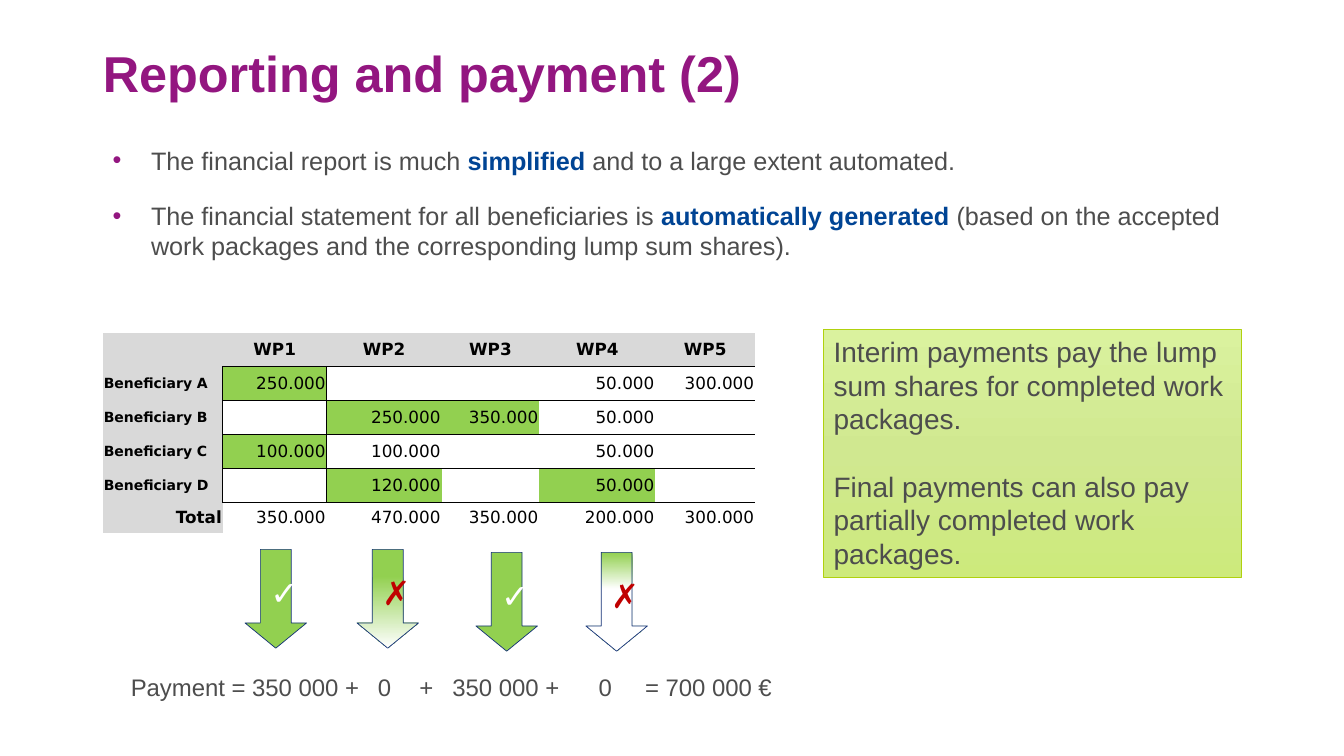
from dataclasses import dataclass

from lxml import etree
from pptx import Presentation
from pptx.dml.color import RGBColor
from pptx.enum.shapes import MSO_SHAPE
from pptx.enum.text import MSO_ANCHOR, MSO_AUTO_SIZE, PP_ALIGN
from pptx.oxml.ns import qn
from pptx.util import Emu, Inches, Pt

SLIDE_WIDTH, SLIDE_HEIGHT = Inches(13.33), Inches(7.5)
TITLE_ONLY = 5
PLAIN_TABLE_STYLE = "{2D5ABB26-0587-4C30-8999-92F81FD0307C}"
LEFT, CENTER, RIGHT = PP_ALIGN.LEFT, PP_ALIGN.CENTER, PP_ALIGN.RIGHT
TOP, MIDDLE, BOTTOM = MSO_ANCHOR.TOP, MSO_ANCHOR.MIDDLE, MSO_ANCHOR.BOTTOM
NO_AUTOFIT = MSO_AUTO_SIZE.NONE
RECTANGLE, DOWN_ARROW = MSO_SHAPE.RECTANGLE, MSO_SHAPE.DOWN_ARROW

PURPLE, GREY, BLUE, NAVY, RED = "931680", "4D4D4D", "004494", "133176", "C00000"
GREEN, SILVER, LIME, WHITE, BLACK = "92D050", "D9D9D9", "B0D10E", "FFFFFF", "000000"


@dataclass(frozen=True)
class Area:
    left: float
    top: float
    width: float
    height: float

    def lengths(self) -> tuple[Emu, Emu, Emu, Emu]:
        return across(self.left), down(self.top), across(self.width), down(self.height)


@dataclass(frozen=True)
class Span:
    text: str
    color: str = GREY
    bold: bool = False


@dataclass(frozen=True)
class Arrow:
    left: float
    top: float
    mark: str
    mark_color: str
    stops: tuple[tuple[int, str], ...] = ()


TITLE_AREA = Area(6.9, 6.8, 86.27, 6.93)
BULLET_AREA = Area(7.65, 18.53, 87.77, 26.53)
NOTE_AREA = Area(61.29, 43.6, 31.06, 32.8)
PAYMENT_AREA = Area(9, 88.27, 59.1, 5.2)

BULLETS = [
    [
        Span("The financial report is much "),
        Span("simplified", BLUE, True),
        Span(" and to a large extent automated."),
    ],
    [
        Span("The financial statement for all beneficiaries is "),
        Span("automatically generated", BLUE, True),
        Span(" (based on the accepted work packages and the corresponding lump sum shares)."),
    ],
]
NOTES = [
    "Interim payments pay the lump sum shares for completed work packages.",
    "Final payments can also pay partially completed work packages.",
]
NOTE_STOPS = ((0, "DAF29E"), (50, "D0E890"), (100, "CDEA7C"))

TABLE_LEFT, TABLE_TOP = 7.65, 44
COLUMN_WIDTHS = [8.93, 7.73, 8.55, 7.28, 8.63, 7.43]
ROW_HEIGHTS = [4.48] * 5 + [4.1]
SHARES = [
    ["", "WP1", "WP2", "WP3", "WP4", "WP5"],
    ["Beneficiary A", "250.000", "", "", "50.000", "300.000"],
    ["Beneficiary B", "", "250.000", "350.000", "50.000", ""],
    ["Beneficiary C", "100.000", "100.000", "", "50.000", ""],
    ["Beneficiary D", "", "120.000", "", "50.000", ""],
    ["Total", "350.000", "470.000", "350.000", "200.000", "300.000"],
]
ACCEPTED = {(1, 1), (2, 2), (2, 3), (3, 1), (4, 2), (4, 4)}
TOTAL_ROW = len(SHARES) - 1

ARROW_WIDTH, ARROW_HEIGHT = 4.58, 13.07
ARROWS = [
    Arrow(18.23, 72.67, "✓", WHITE),
    Arrow(26.56, 72.67, "✗", RED, ((27, GREEN), (100, WHITE))),
    Arrow(35.41, 73.07, "✓", WHITE),
    Arrow(43.59, 73.07, "✗", RED, ((0, GREEN), (37, WHITE))),
]
PAYMENT_TERMS = ["Payment = 350 000 +", "0", "+", "350 000 +", "0", "= 700 000 €"]
PAYMENT_TABS = [18.38, 21.46, 23.93, 34.81, 38.26]


def across(share: float) -> Emu:
    return Emu(round(SLIDE_WIDTH * share / 100))


def down(share: float) -> Emu:
    return Emu(round(SLIDE_HEIGHT * share / 100))


def rgb(color: str) -> RGBColor:
    return RGBColor.from_string(color)


def apply(target, values: dict) -> None:
    for name, value in values.items():
        setattr(target, name, value)


def add_span(para, span: Span, size: float, font: str = "Arial") -> None:
    run = para.add_run()
    run.text = span.text
    apply(run.font, {"name": font, "size": Pt(size), "bold": span.bold})
    run.font.color.rgb = rgb(span.color)


def fill_gradient(shape, stops: tuple[tuple[int, str], ...]) -> None:
    shape.fill.gradient()
    shape.fill.gradient_angle = 270
    stop_list = next(shape.element.iter(qn("a:gsLst")))
    stop_list.clear()
    for position, color in stops:
        stop = etree.SubElement(stop_list, qn("a:gs"), pos=str(position * 1000))
        etree.SubElement(stop, qn("a:srgbClr"), val=color)


def add_figure(slide, kind, area: Area, line: str, stops: tuple[tuple[int, str], ...]):
    figure = slide.shapes.add_shape(kind, *area.lengths())
    figure.shadow.inherit = False
    if stops:
        fill_gradient(figure, stops)
    else:
        figure.fill.solid()
        figure.fill.fore_color.rgb = rgb(GREEN)
    figure.line.color.rgb = rgb(line)
    figure.line.width = Pt(0.5)
    return figure


def add_title(slide) -> None:
    title = slide.shapes.title
    apply(title, dict(zip(("left", "top", "width", "height"), TITLE_AREA.lengths())))
    apply(title.text_frame, {"vertical_anchor": BOTTOM, "auto_size": NO_AUTOFIT, "margin_bottom": 0})
    para = title.text_frame.paragraphs[0]
    apply(para, {"alignment": LEFT, "line_spacing": 0.9})
    add_span(para, Span("Reporting and payment (2)", PURPLE, True), 36)


def add_bullets(slide) -> None:
    frame = slide.shapes.add_textbox(*BULLET_AREA.lengths()).text_frame
    frame.word_wrap = True
    for index, spans in enumerate(BULLETS):
        para = frame.add_paragraph() if index else frame.paragraphs[0]
        para.space_after = Pt(18)
        properties = para._p.get_or_add_pPr()
        properties.set("marL", str(Inches(0.38)))
        properties.set("indent", str(-Inches(0.38)))
        bullet_color = etree.SubElement(properties, qn("a:buClr"))
        etree.SubElement(bullet_color, qn("a:srgbClr"), val=PURPLE)
        etree.SubElement(properties, qn("a:buFont"), typeface="Arial")
        etree.SubElement(properties, qn("a:buChar"), char="•")
        for span in spans:
            add_span(para, span, 18)


def add_border(cell, side: str) -> None:
    line = etree.SubElement(cell._tc.get_or_add_tcPr(), qn(f"a:ln{side}"), w=str(Pt(0.5)))
    fill = etree.SubElement(line, qn("a:solidFill"))
    etree.SubElement(fill, qn("a:srgbClr"), val=BLACK)


def format_cell(cell, row: int, column: int) -> None:
    margin = Inches(0.01)
    apply(cell, {"margin_left": margin, "margin_right": margin, "margin_top": margin,
                 "margin_bottom": 0, "vertical_anchor": MIDDLE})
    in_body = 0 < row < TOTAL_ROW
    borders = {
        "L": column == 1 and in_body,
        "R": column == 0 and in_body,
        "T": column > 0 and row > 0,
        "B": column > 0 and row < TOTAL_ROW,
    }
    for side in (side for side, shown in borders.items() if shown):
        add_border(cell, side)
    heading = row == 0 or column == 0
    cell.fill.solid()
    cell.fill.fore_color.rgb = rgb(SILVER if heading else GREEN if (row, column) in ACCEPTED else WHITE)
    if SHARES[row][column]:
        beneficiary = column == 0 and in_body
        para = cell.text_frame.paragraphs[0]
        para.alignment = CENTER if row == 0 else LEFT if beneficiary else RIGHT
        add_span(para, Span(SHARES[row][column], BLACK, heading), 10 if beneficiary else 12, "DejaVu Sans")


def add_share_table(slide) -> None:
    area = Area(TABLE_LEFT, TABLE_TOP, sum(COLUMN_WIDTHS), sum(ROW_HEIGHTS))
    table = slide.shapes.add_table(len(ROW_HEIGHTS), len(COLUMN_WIDTHS), *area.lengths()).table
    apply(table, {"first_row": False, "horz_banding": False})
    next(table._tbl.iter(qn("a:tableStyleId"))).text = PLAIN_TABLE_STYLE
    for column, width in zip(table.columns, COLUMN_WIDTHS):
        column.width = across(width)
    for row, height in enumerate(ROW_HEIGHTS):
        table.rows[row].height = down(height)
        for column in range(len(COLUMN_WIDTHS)):
            format_cell(table.cell(row, column), row, column)


def add_arrow(slide, arrow: Arrow) -> None:
    area = Area(arrow.left, arrow.top, ARROW_WIDTH, ARROW_HEIGHT)
    figure = add_figure(slide, DOWN_ARROW, area, NAVY, arrow.stops)
    figure.adjustments[0], figure.adjustments[1] = 0.5, 0.41
    figure.text_frame.vertical_anchor = MIDDLE
    para = figure.text_frame.paragraphs[0]
    para.alignment = CENTER
    add_span(para, Span(arrow.mark, arrow.mark_color), 23.9)


def add_payment(slide) -> None:
    frame = slide.shapes.add_textbox(*PAYMENT_AREA.lengths()).text_frame
    frame.word_wrap = True
    para = frame.paragraphs[0]
    tabs = etree.SubElement(para._p.get_or_add_pPr(), qn("a:tabLst"))
    for position in PAYMENT_TABS:
        etree.SubElement(tabs, qn("a:tab"), pos=str(across(position)), algn="l")
    add_span(para, Span("\t".join(PAYMENT_TERMS)), 17.1)


def add_note(slide) -> None:
    frame = add_figure(slide, RECTANGLE, NOTE_AREA, LIME, NOTE_STOPS).text_frame
    apply(frame, {"vertical_anchor": TOP, "word_wrap": True})
    for index, text in enumerate(NOTES):
        para = frame.add_paragraph() if index else frame.paragraphs[0]
        apply(para, {"alignment": LEFT, "space_before": Pt(24 * index)})
        add_span(para, Span(text), 20)


def main() -> None:
    deck = Presentation()
    apply(deck, {"slide_width": SLIDE_WIDTH, "slide_height": SLIDE_HEIGHT})
    slide = deck.slides.add_slide(deck.slide_layouts[TITLE_ONLY])
    add_title(slide)
    add_share_table(slide)
    add_payment(slide)
    for arrow in ARROWS:
        add_arrow(slide, arrow)
    add_bullets(slide)
    add_note(slide)
    deck.save("out.pptx")


if __name__ == "__main__":
    main()
